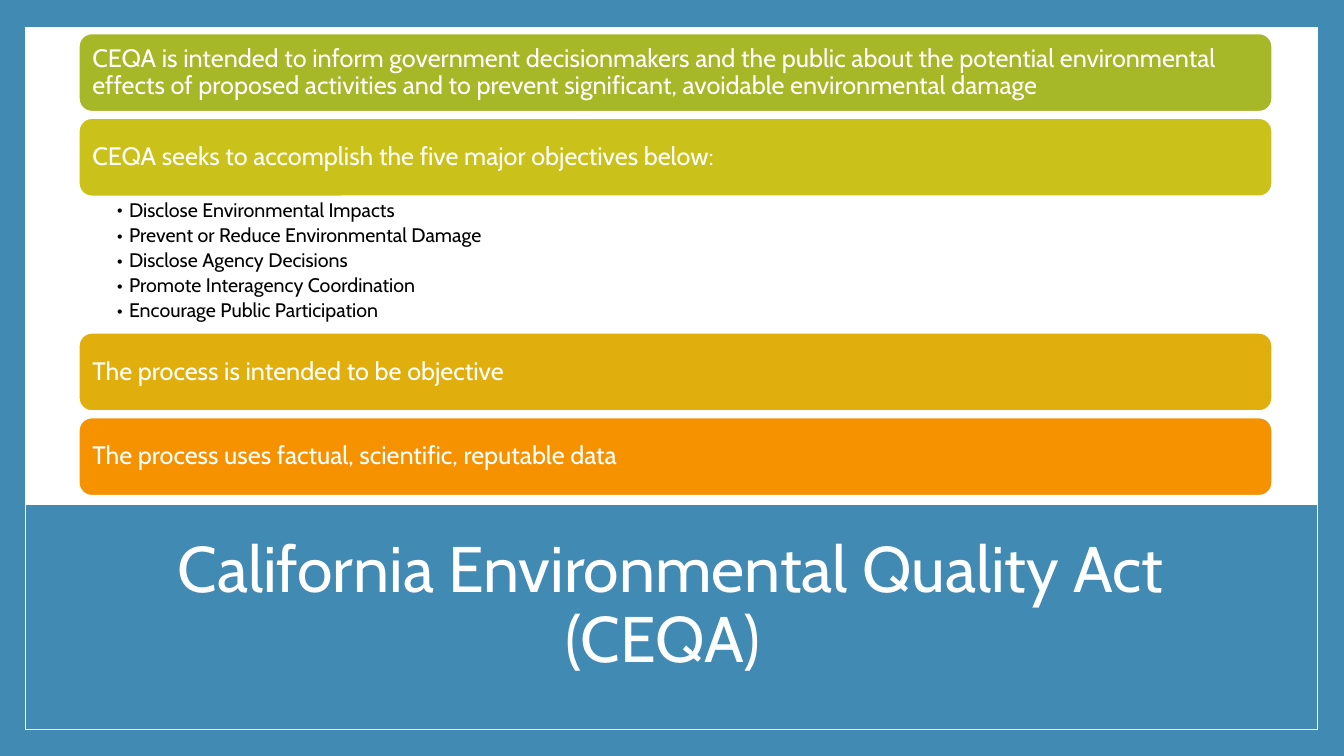
from dataclasses import dataclass

from lxml import etree
from pptx import Presentation
from pptx.dml.color import RGBColor
from pptx.enum.shapes import MSO_SHAPE
from pptx.enum.text import MSO_ANCHOR, MSO_AUTO_SIZE, PP_ALIGN
from pptx.oxml.ns import qn
from pptx.util import Inches, Pt

RECT = MSO_SHAPE.RECTANGLE
ROUND_RECT = MSO_SHAPE.ROUNDED_RECTANGLE
MIDDLE, TOP = MSO_ANCHOR.MIDDLE, MSO_ANCHOR.TOP
LEFT, CENTER = PP_ALIGN.LEFT, PP_ALIGN.CENTER
NO_AUTOFIT = MSO_AUTO_SIZE.NONE

FONT = "Cabin"
COLORS = {
    "blue": "418AB3",
    "white": "FFFFFF",
    "black": "000000",
    "green": "A6B727",
    "lime": "CBC11B",
    "gold": "E0AF0E",
    "orange": "F69200",
}

BAR_LEFT, BAR_WIDTH, BAR_HEIGHT = 0.78, 11.84, 0.78
LIST_TOP, LIST_HEIGHT = 1.96, 1.34


@dataclass
class Panel:
    left: float
    top: float
    width: float
    height: float
    fill: str
    line_pt: float = 0


@dataclass
class Bar:
    top: float
    fill: str
    text: str


PANELS = [
    Panel(0, 0, 13.33, 7.5, "blue"),
    Panel(0.25, 0.27, 12.82, 6.97, "white"),
    Panel(0.25, 5, 12.82, 2.24, "blue", 1),
]
BARS = [
    Bar(0.33, "green", "CEQA is intended to inform government decisionmakers and the public "
        "about the potential environmental effects of proposed activities and to prevent "
        "significant, avoidable environmental damage"),
    Bar(1.17, "lime", "CEQA seeks to accomplish the five major objectives below:"),
    Bar(3.3, "gold", "The process is intended to be objective"),
    Bar(4.14, "orange", "The process uses factual, scientific, reputable data"),
]
OBJECTIVES = [
    "Disclose Environmental Impacts",
    "Prevent or Reduce Environmental Damage",
    "Disclose Agency Decisions",
    "Promote Interagency Coordination",
    "Encourage Public Participation",
]


def rgb(name: str) -> RGBColor:
    return RGBColor.from_string(COLORS[name])


def place(s, left: float, top: float, width: float, height: float) -> None:
    s.left, s.top = Inches(left), Inches(top)
    s.width, s.height = Inches(width), Inches(height)


def add_panel(slide, panel: Panel, kind=RECT):
    s = slide.shapes.add_shape(kind, Inches(panel.left), Inches(panel.top),
                               Inches(panel.width), Inches(panel.height))
    s.shadow.inherit = False
    s.fill.solid()
    s.fill.fore_color.rgb = rgb(panel.fill)
    if panel.line_pt:
        s.line.color.rgb = rgb("white")
        s.line.width = Pt(panel.line_pt)
    else:
        s.line.fill.background()
    return s


def format_text(tf, size: float, color: str, align=LEFT, anchor=MIDDLE,
                after: float = 0) -> None:
    tf.word_wrap = True
    tf.auto_size = NO_AUTOFIT
    tf.vertical_anchor = anchor
    for p in tf.paragraphs:
        p.alignment = align
        p.line_spacing = 0.9
        p.space_before, p.space_after = Pt(0), Pt(after)
        for r in p.runs:
            r.font.name = FONT
            r.font.size = Pt(size)
            r.font.color.rgb = rgb(color)


def set_insets(tf, left: float, top: float, right: float, bottom: float) -> None:
    tf.margin_left, tf.margin_top = Inches(left), Inches(top)
    tf.margin_right, tf.margin_bottom = Inches(right), Inches(bottom)


def add_bar(slide, bar: Bar) -> None:
    panel = Panel(BAR_LEFT, bar.top, BAR_WIDTH, BAR_HEIGHT, bar.fill, 1.5)
    tf = add_panel(slide, panel, ROUND_RECT).text_frame
    tf.text = bar.text
    set_insets(tf, 0.1, 0.1, 0.1, 0.1)
    format_text(tf, 18, "white")


def add_bullet(p) -> None:
    p.level = 1
    pPr = p._p.get_or_add_pPr()
    pPr.set("marL", str(Inches(0.12)))
    pPr.set("indent", str(-Inches(0.12)))
    etree.SubElement(pPr, qn("a:buFont")).set("typeface", FONT)
    etree.SubElement(pPr, qn("a:buChar")).set("char", "•")


def main() -> None:
    prs = Presentation()
    prs.slide_width, prs.slide_height = Inches(13.33), Inches(7.5)
    slide = prs.slides.add_slide(prs.slide_layouts[1])
    title, body = slide.placeholders

    # Frame and title band
    for panel in PANELS:
        add_panel(slide, panel)

    # Statement bars
    for bar in BARS:
        add_bar(slide, bar)

    # Title
    place(title, 1.25, 5.28, 10.8, 1.48)
    title.text_frame.text = "California Environmental Quality Act (CEQA) "
    format_text(title.text_frame, 46, "white", CENTER)

    # List of objectives
    place(body, BAR_LEFT, LIST_TOP, BAR_WIDTH, LIST_HEIGHT)
    tf = body.text_frame
    tf.text = "\n".join(OBJECTIVES)
    set_insets(tf, 0.38, 0.03, 0.14, 0.03)
    format_text(tf, 14, "black", anchor=TOP, after=2.8)
    for p in tf.paragraphs:
        add_bullet(p)

    # Bring the placeholders in front of the panels
    for s in (title, body):
        slide.shapes._spTree.append(s._element)

    prs.save("out.pptx")


if __name__ == "__main__":
    main()
